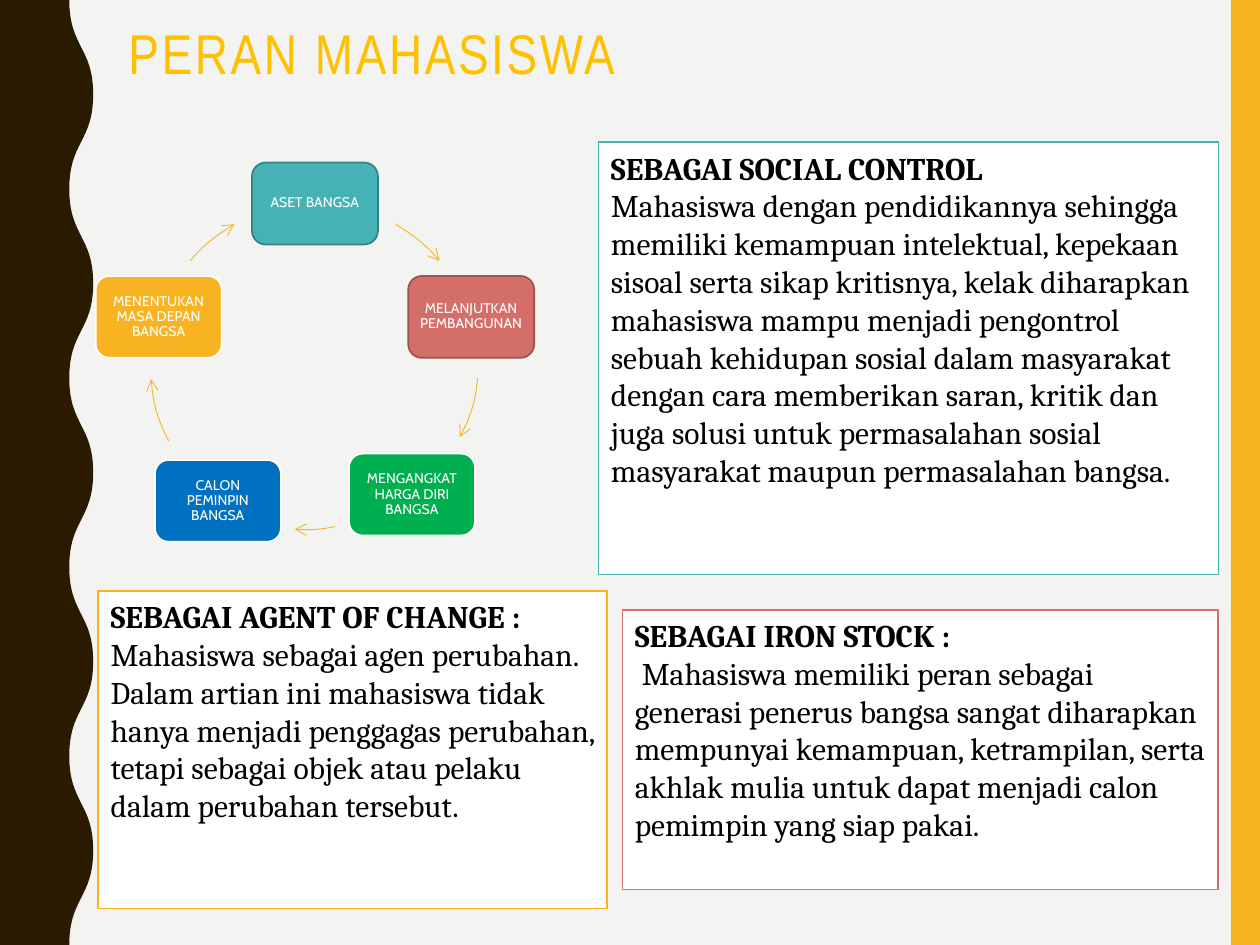
from lxml.etree import SubElement
from pptx import Presentation
from pptx.dml.color import RGBColor
from pptx.enum.shapes import MSO_SHAPE
from pptx.enum.text import MSO_ANCHOR, PP_ALIGN
from pptx.oxml.ns import qn
from pptx.util import Inches, Pt

GOLD, BROWN, TEAL, ROSE = "F8B323", "2A1A00", "46B2B5", "D36F68"
WHITE, BLACK = "FFFFFF", "000000"
TITLE = "PERAN MAHASISWA"

# text, left, top, fill, line
STEPS = [
    ("ASET BANGSA", 2, 1.29, TEAL, "348486"),
    ("MELANJUTKAN PEMBANGUNAN", 3.24, 2.19, ROSE, "9C524D"),
    ("MENGANGKAT HARGA DIRI BANGSA", 2.77, 3.6, "00B050", WHITE),
    ("CALON PEMINPIN BANGSA", 1.23, 3.65, "0070C0", WHITE),
    ("MENENTUKAN MASA DEPAN BANGSA", 0.76, 2.19, GOLD, WHITE),
]
# left and top of the ring, start, then two control points and end
RING = 2.6
ARROWS = [
    ((1.2, 1.62), (3.14, 1.78), [(3.27, 1.86), (3.39, 1.95), (3.49, 2.07)]),
    ((1.2, 1.56), (3.79, 3), [(3.78, 3.16), (3.73, 3.32), (3.65, 3.47)]),
    ((1.11, 1.6), (2.66, 4.18), [(2.56, 4.2), (2.45, 4.21), (2.34, 4.2)]),
    ((1.2, 1.62), (1.34, 3.5), [(1.26, 3.35), (1.21, 3.18), (1.2, 3.01)]),
    ((1.2, 1.62), (1.51, 2.07), [(1.61, 1.95), (1.73, 1.86), (1.86, 1.78)]),
]
# box, line, heading, lead of second line, body
CARDS = [
    ((4.75, 1.13, 4.92, 3.43), TEAL, "SEBAGAI SOCIAL CONTROL", "",
     "Mahasiswa dengan pendidikannya sehingga memiliki kemampuan intelektual, "
     "kepekaan sisoal serta sikap kritisnya, kelak diharapkan mahasiswa mampu "
     "menjadi pengontrol sebuah kehidupan sosial dalam masyarakat dengan cara "
     "memberikan saran, kritik dan juga solusi untuk permasalahan sosial "
     "masyarakat maupun permasalahan bangsa."),
    ((0.78, 4.69, 4.04, 2.52), GOLD, "SEBAGAI AGENT OF CHANGE :", "",
     "Mahasiswa sebagai agen perubahan. Dalam artian ini mahasiswa tidak hanya "
     "menjadi penggagas perubahan, tetapi sebagai objek atau pelaku dalam "
     "perubahan tersebut."),
    ((4.94, 4.84, 4.73, 2.22), ROSE, "SEBAGAI IRON STOCK :", " ",
     "Mahasiswa memiliki peran sebagai generasi penerus bangsa sangat "
     "diharapkan mempunyai kemampuan, ketrampilan, serta akhlak mulia untuk "
     "dapat menjadi calon pemimpin yang siap pakai."),
]


def rgb(text):
    return RGBColor.from_string(text)


def paint(shape, fill=None, line=None, width=1):
    shape.shadow.inherit = False
    if fill:
        shape.fill.solid()
        shape.fill.fore_color.rgb = rgb(fill)
    else:
        shape.fill.background()
    if line:
        shape.line.color.rgb = rgb(line)
        shape.line.width = Pt(width)
    else:
        shape.line.fill.background()


def add_box(kind, box, fill, line=None):
    shape = slide.shapes.add_shape(kind, *map(Inches, box))
    paint(shape, fill, line)
    return shape


def add_run(para, text, size, font, color, bold=False):
    run = para.add_run()
    run.text = text
    run.font.size, run.font.name, run.font.bold = Pt(size), font, bold
    run.font.color.rgb = rgb(color)
    return run


def add_curve(box, start, curves, closed=False):
    """Freeform filling box, drawn with cubic curves in slide inches."""
    left, top, width, height = box
    form = slide.shapes.build_freeform(Inches(left), Inches(top))
    form.add_line_segments([(Inches(left + width), Inches(top + height))], close=False)
    shape = form.convert_to_shape()
    route = shape._element.find(".//" + qn("a:path"))
    for part in list(route):
        route.remove(part)

    def draw(tag, points):
        part = SubElement(route, qn(tag))
        for x, y in points:
            SubElement(part, qn("a:pt"), x=str(Inches(x - left)), y=str(Inches(y - top)))

    draw("a:moveTo", [start])
    for curve in curves:
        draw("a:cubicBezTo", curve)
    if closed:
        SubElement(route, qn("a:close"))
    return shape


def add_wave():
    low, high, step = 0.55, 0.74, 0.75
    curves = []
    for i in range(10):
        x, end = (high, low) if i % 2 else (low, high)
        y = 7.5 - i * step
        mid = y - step / 2
        curves.append([(x, mid), (end, mid), (end, y - step)])
    curves += [[corner] * 3 for corner in ((0, 0), (0, 7.5))]
    paint(add_curve((0, 0, high, 7.5), (low, 7.5), curves, True), BROWN)


def add_arrow(corner, start, curve):
    shape = add_curve((*corner, RING, RING), start, [curve])
    paint(shape, line=GOLD, width=0.5)
    SubElement(shape.line._get_or_add_ln(), qn("a:tailEnd"), type="arrow")


def add_step(text, left, top, fill, line):
    shape = add_box(MSO_SHAPE.ROUNDED_RECTANGLE, (left, top, 1, 0.65), fill, line)
    frame = shape.text_frame
    frame.word_wrap = True
    frame.margin_left = frame.margin_right = Inches(0.06)
    frame.margin_top = frame.margin_bottom = Inches(0.06)
    para = frame.paragraphs[0]
    para.alignment, para.line_spacing = PP_ALIGN.CENTER, 0.9
    add_run(para, text, 8, "Cabin", WHITE)


def add_card(box, line, head, lead, body):
    frame = add_box(MSO_SHAPE.RECTANGLE, box, WHITE, line).text_frame
    frame.word_wrap = True
    frame.vertical_anchor = MSO_ANCHOR.TOP
    para = frame.paragraphs[0]
    para.alignment = PP_ALIGN.LEFT
    add_run(para, head, 18, "Cambria", BLACK, True)
    para.add_line_break()
    if lead:
        add_run(para, lead, 18, "Cambria", BLACK, True)
    add_run(para, body, 18, "Cambria", BLACK)


def add_title():
    box = slide.shapes.add_textbox(*map(Inches, (0.92, 0.16, 8.35, 0.83)))
    box.text_frame.word_wrap = True
    para = box.text_frame.paragraphs[0]
    para.line_spacing = 0.9
    run = add_run(para, TITLE, 32, "Arial Narrow", "FFC000")
    run.font._element.set("spc", "150")


deck = Presentation()
deck.slide_width, deck.slide_height = Inches(10), Inches(7.5)
slide = deck.slides.add_slide(deck.slide_layouts[6])
slide.background.fill.solid()
slide.background.fill.fore_color.rgb = rgb("F3F3F2")

add_box(MSO_SHAPE.RECTANGLE, (9.77, 0, 0.23, 7.5), GOLD)
add_wave()
for step, arrow in zip(STEPS, ARROWS):
    add_step(*step)
    add_arrow(*arrow)
add_title()
for card in CARDS:
    add_card(*card)
deck.save("out.pptx")
